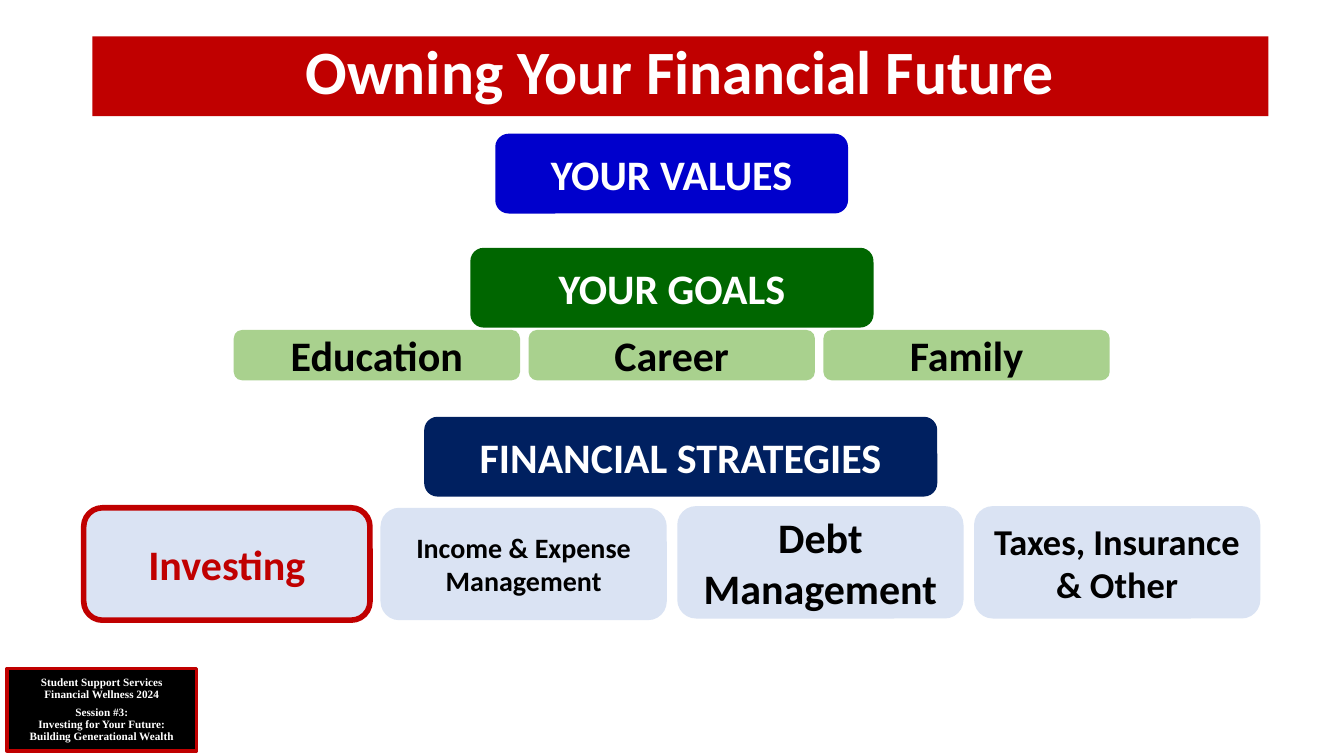
import pptx
import pptx.util
import pptx.dml.color
import pptx.enum.shapes
import pptx.enum.text

Pt = pptx.util.Pt
RGB = pptx.dml.color.RGBColor
Form = pptx.enum.shapes.MSO_SHAPE
Anchor = pptx.enum.text.MSO_ANCHOR
Align = pptx.enum.text.PP_ALIGN

WHITE = RGB(0xFF, 0xFF, 0xFF)
BLACK = RGB(0x00, 0x00, 0x00)
RED = RGB(0xC0, 0x00, 0x00)
BLUE = RGB(0x00, 0x00, 0xCC)
GREEN = RGB(0x00, 0x66, 0x00)
NAVY = RGB(0x00, 0x20, 0x60)
LIME = RGB(0xA9, 0xD1, 0x8E)
PALE = RGB(0xDA, 0xE3, 0xF3)


class Deck:
    font = "Calibri"
    width = 204.5  # every small box

    def __init__(self):
        self.show = pptx.Presentation()
        self.show.slide_width, self.show.slide_height = Pt(960), Pt(540)
        self.slide = self.show.slides.add_slide(self.show.slide_layouts[5])

    def style(self, par, size, color, font=None, space=None):
        par.alignment = Align.CENTER
        par.line_spacing = space
        par.font.name = font or self.font
        par.font.size = Pt(size)
        par.font.bold = True
        par.font.color.rgb = color

    def paint(self, shape, fill):
        shape.fill.solid()
        shape.fill.fore_color.rgb = fill

    def title(self, text, left, top, width, height):
        box = self.slide.shapes.title
        box.left, box.top = Pt(left), Pt(top)
        box.width, box.height = Pt(width), Pt(height)
        self.paint(box, RED)
        frame = box.text_frame
        frame.text = text
        frame.vertical_anchor = Anchor.TOP
        frame.auto_size = pptx.enum.text.MSO_AUTO_SIZE.NONE
        self.style(frame.paragraphs[0], 44, WHITE, space=0.9)

    def box(self, left, top, width, height, fill, line=None, weight=0,
            form=Form.ROUNDED_RECTANGLE):
        shape = self.slide.shapes.add_shape(
            form, Pt(left), Pt(top), Pt(width), Pt(height))
        shape.shadow.inherit = False
        self.paint(shape, fill)
        if line is None:
            shape.line.fill.background()
        else:
            shape.line.color.rgb = line
            shape.line.width = Pt(weight)
        shape.text_frame.word_wrap = True
        shape.text_frame.vertical_anchor = Anchor.MIDDLE
        return shape

    def label(self, text, left, top, width, height, fill, color=WHITE,
              size=30, line=None, weight=0):
        shape = self.box(left, top, width, height, fill, line, weight)
        par = shape.text_frame.paragraphs[0]
        par.text = text
        self.style(par, size, color)

    def badge(self, lines, left, top, width, height):
        shape = self.box(left, top, width, height, BLACK, RED, 2.25,
                         Form.RECTANGLE)
        frame = shape.text_frame
        for i, (text, gap) in enumerate(lines):
            par = frame.add_paragraph() if i else frame.paragraphs[0]
            par.text = text
            self.style(par, 8, WHITE, "Times New Roman", 0.9)
            par.space_before = Pt(gap)


def main():
    deck = Deck()

    # Session badge
    deck.badge([("Student Support Services", 0),
                ("Financial Wellness 2024", 0),
                ("Session #3:\nInvesting for Your Future:", 4.3),
                ("Building Generational Wealth", 0)], 5, 477.5, 135.5, 59)

    # Title
    deck.title("Owning Your Financial Future", 66, 26, 840, 57)

    # Level headings
    for text, left, top, width, fill in (
            ("YOUR VALUES", 353.8, 95.5, 252, BLUE),
            ("YOUR GOALS", 336, 177, 288, GREEN),
            ("FINANCIAL STRATEGIES", 303, 297.7, 366.5, NAVY)):
        deck.label(text, left, top, width, 57, fill)

    # Goals
    for i, text in enumerate(("Education", "Career", "Family")):
        deck.label(text, 167 + 210.6 * i, 235.7, deck.width, 36, LIME, BLACK)

    # Strategies
    for i, (text, size, top, color, line) in enumerate((
            ("Investing", 30, 362.7, RED, RED),
            ("Income & Expense Management", 20, 362.7, BLACK, None),
            ("Debt Management", 30, 361.5, BLACK, None),
            ("Taxes, Insurance & Other", 26, 361.5, BLACK, None))):
        deck.label(text, 59.8 + 212 * i, top, deck.width, 80.3, PALE, color,
                   size, line, 4)

    deck.show.save("out.pptx")


if __name__ == "__main__":
    main()
